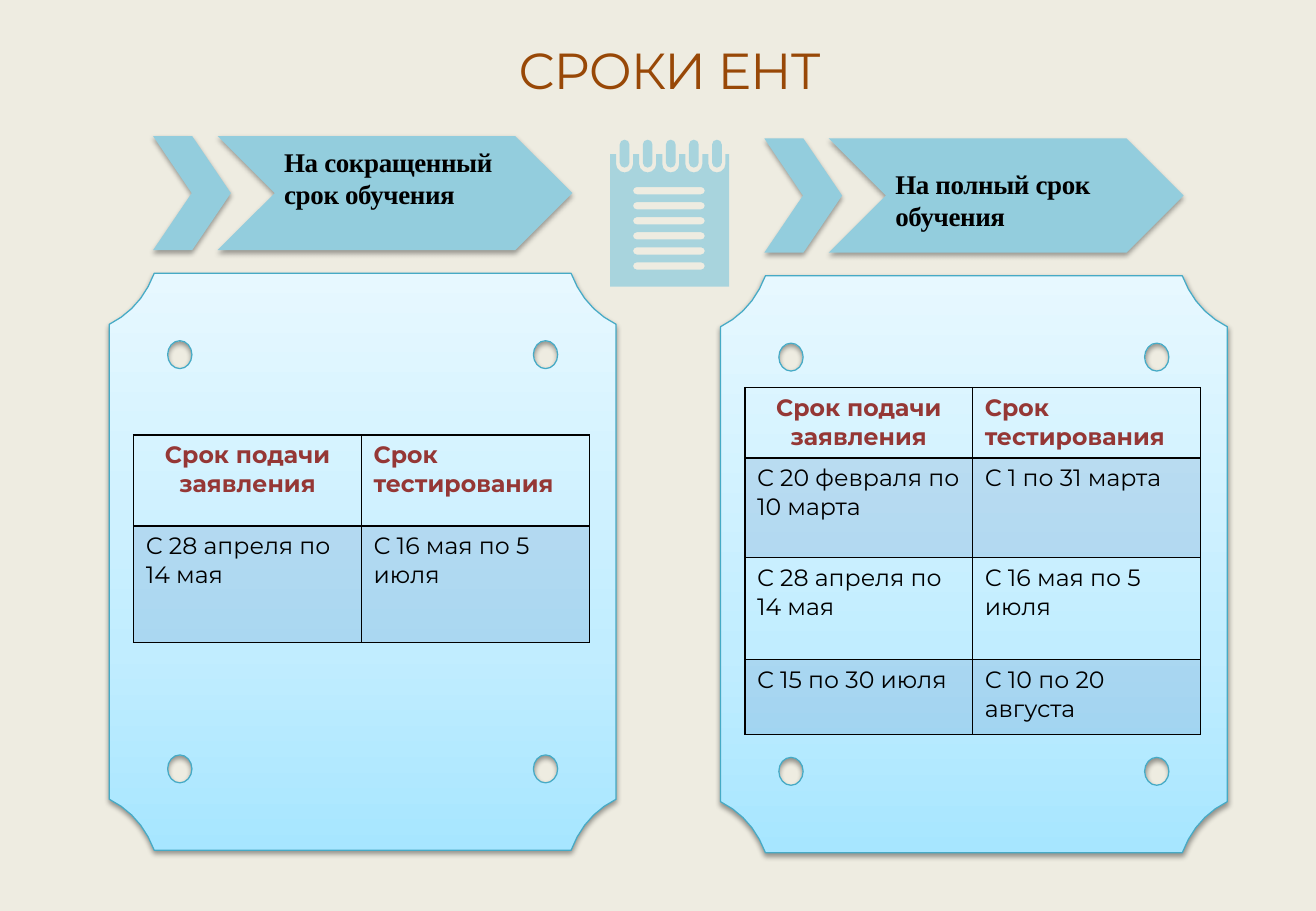
from copy import deepcopy
from math import cos, pi, sin

from lxml import etree
from pptx import Presentation
from pptx.dml.color import RGBColor
from pptx.enum.shapes import MSO_SHAPE
from pptx.enum.text import PP_ALIGN
from pptx.oxml.ns import qn
from pptx.util import Inches, Pt

CHEVRON = MSO_SHAPE.CHEVRON
LEFT, CENTER = PP_ALIGN.LEFT, PP_ALIGN.CENTER
SANS, SERIF = "Montserrat", "Times New Roman"
HEADERS = ["Срок подачи заявления", "Срок тестирования"]
SHORT_TERM = [HEADERS, ["С 28 апреля по 14 мая", "С 16 мая по 5 июля"]]
FULL_TERM = [
    HEADERS,
    ["С 20 февраля по 10 марта", "С 1 по 31 марта"],
    ["С 28 апреля по 14 мая", "С 16 мая по 5 июля"],
    ["С 15 по 30 июля", "С 10 по 20 августа"],
]


def rgb(value):
    return RGBColor.from_string(value)


def sub(parent, tag, **attrs):
    el = etree.SubElement(parent, qn(tag))
    for name, value in attrs.items():
        el.set(name, str(value))
    return el


def set_alpha(props, percent):
    color = next(props.iter(qn("a:srgbClr")))
    sub(color, "a:alpha", val=percent * 1000)


def add_shadow(sp, percent, dist):
    sp.shadow.inherit = False
    effects = sp._element.spPr.find(qn("a:effectLst"))
    shadow = sub(effects, "a:outerShdw", blurRad=Pt(3.1), dist=Pt(dist),
                 dir=5400000, rotWithShape=0)
    sub(shadow, "a:srgbClr", val="000000")
    set_alpha(shadow, percent)


def add_run(p, text, font, size, color, bold=False, spacing=0):
    r = p.add_run()
    r.text = text
    r.font.name, r.font.size, r.font.bold = font, Pt(size), bold
    r.font.color.rgb = rgb(color)
    if spacing:
        r._r.get_or_add_rPr().set("spc", str(int(spacing * 100)))


def add_text_box(slide, x, y, w, h):
    tf = slide.shapes.add_textbox(Inches(x), Inches(y), Inches(w), Inches(h)).text_frame
    tf.word_wrap = True
    return tf


# Outlines: lists of points in inches
def arc(cx, cy, rx, ry, start, end, steps):
    angles = [pi * (start + (end - start) * i / steps) / 180 for i in range(steps + 1)]
    return [(cx + rx * cos(a), cy + ry * sin(a)) for a in angles]


def pill(x, y, w, h):
    r = min(w, h) / 2
    if w > h:
        return (arc(x + r, y + r, r, r, 90, 270, 4)
                + arc(x + w - r, y + r, r, r, -90, 90, 4))
    return (arc(x + r, y + r, r, r, 180, 360, 4)
            + arc(x + r, y + h - r, r, r, 0, 180, 4))


def curve(start, bend, end, steps=5):
    points = []
    for i in range(steps + 1):
        t = i / steps
        points.append(tuple((1 - t) ** 2 * a + 2 * t * (1 - t) * b + t * t * c
                            for a, b, c in zip(start, bend, end)))
    return points


def add_outline(slide, contours):
    contours = [[(Inches(x), Inches(y)) for x, y in c] for c in contours]
    builder = slide.shapes.build_freeform(*contours[0][0])
    for i, points in enumerate(contours):
        if i:
            builder.move_to(*points[0])
        builder.add_line_segments(points[1:], close=True)
    return builder.convert_to_shape()


def add_title(slide, x, y, w, h):
    tf = add_text_box(slide, x, y, w, h)
    tf.margin_left = tf.margin_right = tf.margin_top = tf.margin_bottom = 0
    p = tf.paragraphs[0]
    p.alignment, p.line_spacing = CENTER, Pt(47.6)
    add_run(p, "СРОКИ ЕНТ", SANS, 30, "984807", spacing=-0.5)


def add_plate(slide, x, y, w, h):
    # Scooped corners, clockwise from top left
    outline = []
    for right, bottom in [(0, 0), (1, 0), (1, 1), (0, 1)]:
        cx, cy = x + right * w, y + bottom * h
        sx, sy = 1 - 2 * right, 1 - 2 * bottom
        corner = curve((cx, cy + sy * 0.42), (cx + sx * 0.26, cy + sy * 0.29),
                       (cx + sx * 0.37, cy))
        outline += corner if right == bottom else corner[::-1]
    # Screw holes
    holes = [arc(cx, cy, 0.1, 0.115, 0, 337.5, 15)
             for cx in (x + 0.58, x + w - 0.58) for cy in (y + 0.67, y + h - 0.67)]
    sp = add_outline(slide, [outline] + holes)
    sp.fill.gradient()
    sp.fill.gradient_angle = 90
    stops = sp._element.spPr.find(".//" + qn("a:gsLst"))
    stops.insert(1, deepcopy(stops[0]))
    colors = [(0, "A7E6FF"), (0.35, "C1EDFF"), (1, "E7F8FF")]
    for stop, (position, color) in zip(sp.fill.gradient_stops, colors):
        stop.position = position
        stop.color.rgb = rgb(color)
    sp.line.color.rgb = rgb("46AAC5")
    sp.line.width = Pt(0.75)
    add_shadow(sp, 38, 1.6)


def add_banner(slide, x, y, label, label_y):
    for dx, w, adj in [(0.53, 2.92, 0.5), (0, 0.64, 0.497)]:
        sp = slide.shapes.add_shape(CHEVRON, Inches(x + dx), Inches(y), Inches(w), Inches(0.94))
        sp.adjustments[0] = adj
        sp.fill.solid()
        sp.fill.fore_color.rgb = rgb("93CDDD")
        sp.line.fill.background()
        add_shadow(sp, 35, 1.8)
    tf = add_text_box(slide, x + 0.98, y + label_y, 2.35, 0.64)
    add_run(tf.paragraphs[0], label, SERIF, 16, "000000", True, -0.2)


def add_dates(slide, x, y, rows, heights):
    w = 3.75
    table = slide.shapes.add_table(len(rows), 2, Inches(x), Inches(y),
                                   Inches(w), Inches(sum(heights))).table
    table.first_row = table.horz_banding = False
    for col in table.columns:
        col.width = Inches(w / 2)
    for i, (texts, height) in enumerate(zip(rows, heights)):
        table.rows[i].height = Inches(height)
        for j, text in enumerate(texts):
            cell = table.cell(i, j)
            tcPr = cell._tc.get_or_add_tcPr()
            for side in "LRTB":
                ln = sub(tcPr, "a:ln" + side, w=Pt(1))
                sub(sub(ln, "a:solidFill"), "a:srgbClr", val="000000")
            if i % 2:
                cell.fill.solid()
                cell.fill.fore_color.rgb = rgb("4F81BD")
                set_alpha(tcPr.find(qn("a:solidFill")), 20)
            else:
                cell.fill.background()
            p = cell.text_frame.paragraphs[0]
            p.alignment = CENTER if i == j == 0 else LEFT
            add_run(p, text, SANS, 14, "000000" if i else "953735", i == 0)


def add_panel(slide, x, y, label, label_y, rows, heights, table_y):
    add_plate(slide, x, y + 1.13, 4.17, 4.75)
    add_banner(slide, x + 0.36, y, label, label_y)
    add_dates(slide, x + 0.2, y + table_y, rows, heights)


def add_notepad(slide, x, y, w, h):
    page_top, pitch = y + 0.12, 0.19
    rings = [x + 0.12 + pitch * i for i in range(5)]
    # Page with a notch under each ring
    page = [(x, page_top)]
    for cx in rings:
        page += [(cx - 0.07, page_top), *arc(cx, y + 0.2, 0.07, 0.07, 180, 0, 6),
                 (cx + 0.07, page_top)]
    page += [(x + w, page_top), (x + w, y + h), (x, y + h)]
    ring_pills = [pill(cx - 0.04, y, 0.08, 0.23) for cx in rings]
    text_lines = [pill(x + 0.19, y + 0.39 + 0.124 * i, 0.59, 0.06) for i in range(6)]
    sp = add_outline(slide, [page] + ring_pills + text_lines)
    sp.fill.solid()
    sp.fill.fore_color.rgb = rgb("93CDDD")
    set_alpha(sp._element.spPr, 76)
    sp.line.fill.background()
    sp.shadow.inherit = False


def main():
    prs = Presentation()
    prs.slide_width, prs.slide_height = Inches(10.83), Inches(7.5)
    slide = prs.slides.add_slide(prs.slide_layouts[6])
    slide.background.fill.solid()
    slide.background.fill.fore_color.rgb = rgb("EEECE1")
    add_title(slide, 1.84, 0.16, 7.34, 0.67)
    add_panel(slide, 0.9, 1.12, "На сокращенный срок обучения", 0.03,
              SHORT_TERM, [0.75, 0.96], 2.46)
    add_panel(slide, 5.93, 1.14, "На полный срок обучения", 0.19,
              FULL_TERM, [0.58, 0.82, 0.84, 0.62], 2.05)
    add_notepad(slide, 5.02, 1.15, 0.98, 1.21)
    prs.save("out.pptx")


if __name__ == "__main__":
    main()
